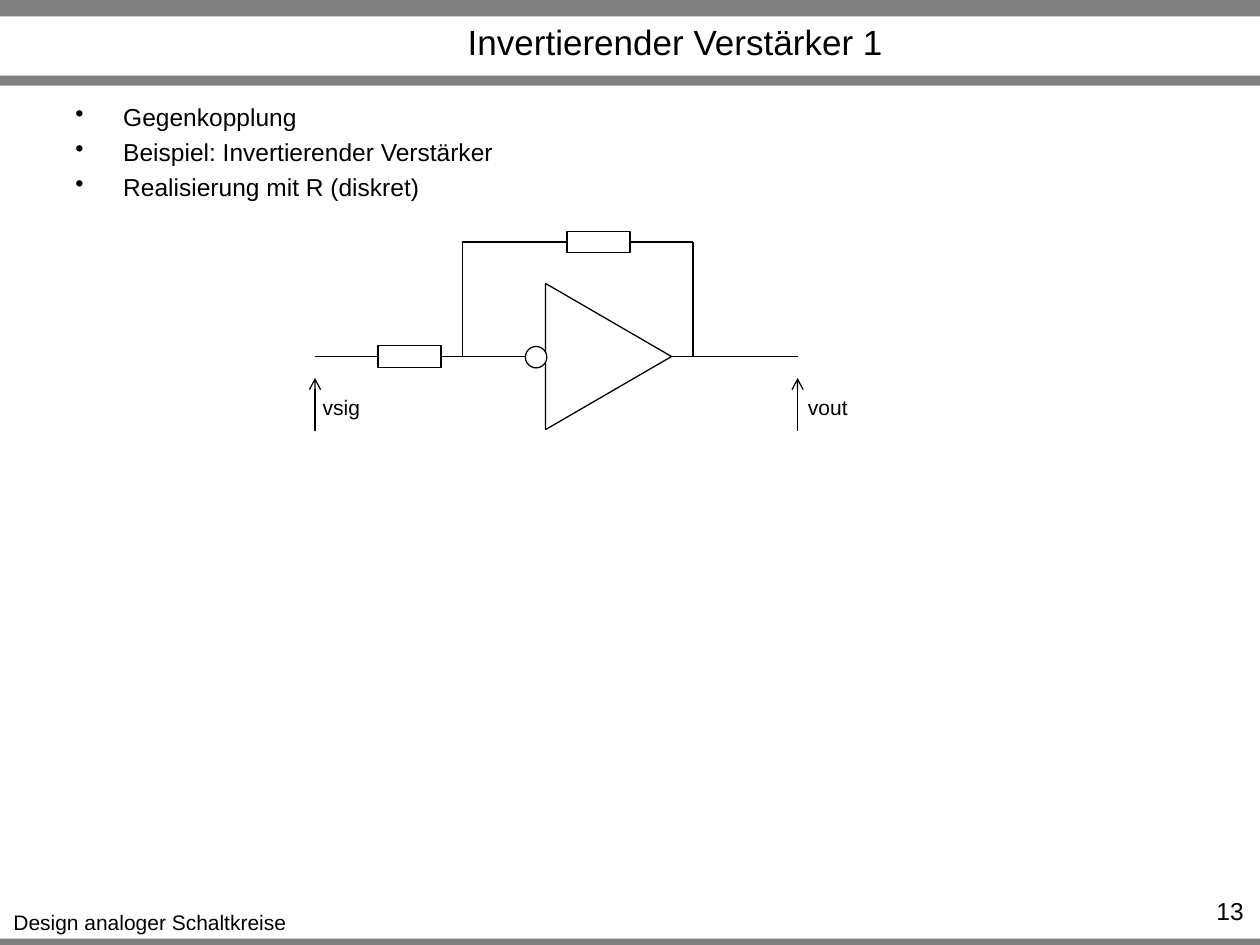
"""Build a slide showing an inverting amplifier with negative feedback."""
from dataclasses import dataclass
from typing import Any, Optional

from lxml.etree import SubElement
from pptx import Presentation
from pptx.dml.color import RGBColor
from pptx.enum.shapes import MSO_CONNECTOR, MSO_SHAPE as SHAPE
from pptx.enum.text import MSO_ANCHOR as ANCHOR, MSO_AUTO_SIZE as AUTO, PP_ALIGN as ALIGN
from pptx.oxml.ns import qn
from pptx.util import Inches, Pt

BLACK, WHITE, GREY = "000000", "FFFFFF", "808080"
SIGNAL_Y, FEEDBACK_Y = 2.83, 1.92
IN_X, OUT_X, TAP_IN_X, TAP_OUT_X = 2.5, 6.33, 3.67, 5.5
RESISTOR_W, RESISTOR_H = 0.5, 0.17
LEFT, RIGHT = 1, 3


@dataclass
class Wire:
    x1: float
    y1: float
    x2: float
    y2: float
    start: Optional[tuple[Any, int]] = None
    end: Optional[tuple[Any, int]] = None
    arrow: bool = False


def rgb(value: str) -> RGBColor:
    return RGBColor.from_string(value)


def add_part(shapes: Any, kind: Any, x: float, y: float, w: float, h: float,
             fill: Optional[str] = WHITE, line: Optional[str] = BLACK,
             rotation: float = 0) -> Any:
    s = shapes.add_shape(kind, Inches(x), Inches(y), Inches(w), Inches(h))
    s.shadow.inherit = False
    s.rotation = rotation
    if fill:
        s.fill.solid()
        s.fill.fore_color.rgb = rgb(fill)
    else:
        s.fill.background()
    if line:
        s.line.color.rgb = rgb(line)
        s.line.width = Pt(0.75)
    else:
        s.line.fill.background()
    return s


def add_resistor(shapes: Any, x: float, y: float) -> Any:
    return add_part(shapes, SHAPE.RECTANGLE, x, y - RESISTOR_H / 2, RESISTOR_W, RESISTOR_H)


def add_wire(shapes: Any, wire: Wire) -> None:
    s = shapes.add_connector(MSO_CONNECTOR.STRAIGHT, Inches(wire.x1), Inches(wire.y1),
                             Inches(wire.x2), Inches(wire.y2))
    if wire.start:
        s.begin_connect(*wire.start)
    if wire.end:
        s.end_connect(*wire.end)
    s.line.color.rgb = rgb(BLACK)
    s.line.width = Pt(0.75)
    if wire.arrow:
        SubElement(s.line._get_or_add_ln(), qn("a:tailEnd"), type="arrow")
    SubElement(s._element.spPr, qn("a:effectLst"))


def add_text(shapes: Any, text: str, x: float, y: float, w: float, h: float,
             size: float = 12, align: Any = ALIGN.CENTER, anchor: Any = ANCHOR.TOP,
             wrap: bool = True, bullets: bool = False) -> None:
    tf = shapes.add_textbox(Inches(x), Inches(y), Inches(w), Inches(h)).text_frame
    tf.word_wrap = wrap
    tf.auto_size = AUTO.NONE if wrap else AUTO.SHAPE_TO_FIT_TEXT
    tf.vertical_anchor = anchor
    for i, line in enumerate(text.split("\n")):
        p = tf.add_paragraph() if i else tf.paragraphs[0]
        p.alignment = align
        if i:
            p.space_before = Pt(3.2)
        if bullets:
            pPr = p._p.get_or_add_pPr()
            pPr.set("marL", str(Inches(0.38)))
            pPr.set("indent", str(-Inches(0.38)))
            SubElement(pPr, qn("a:buChar"), char="•")
        r = p.add_run()
        r.text = line
        r.font.name = "Arial"
        r.font.size = Pt(size)
        r.font.color.rgb = rgb(BLACK)


def add_frame(shapes: Any) -> None:
    for y, h in ((7.45, 0.08), (0, 0.13), (0.6, 0.08)):
        add_part(shapes, SHAPE.RECTANGLE, 0, y, 10, h, fill=GREY, line=None)
    add_text(shapes, "Design analoger Schaltkreise", 0, 7.17, 2.38, 0.3, wrap=False)
    add_text(shapes, "Invertierender Verstärker 1", 1.26, 0.14, 8.2, 0.38,
             size=20, anchor=ANCHOR.MIDDLE)
    add_text(shapes, "Gegenkopplung\nBeispiel: Invertierender Verstärker\n"
             "Realisierung mit R (diskret)", 0.5, 0.76, 9, 0.49,
             size=14, align=ALIGN.LEFT, bullets=True)
    add_text(shapes, "13", 9.1, 7.06, 0.87, 0.24, size=14, align=ALIGN.RIGHT)


def add_circuit(shapes: Any) -> None:
    add_part(shapes, SHAPE.ISOSCELES_TRIANGLE, 4.25, 2.33, 1.16, 1, fill=None, rotation=90)
    r_in = add_resistor(shapes, 3, SIGNAL_Y)
    r_feedback = add_resistor(shapes, 4.5, FEEDBACK_Y)
    wires = [
        Wire(IN_X, SIGNAL_Y, 3, SIGNAL_Y, end=(r_in, LEFT)),
        Wire(3.5, SIGNAL_Y, 4.17, SIGNAL_Y, start=(r_in, RIGHT)),
        Wire(5.33, SIGNAL_Y, OUT_X, SIGNAL_Y),
        Wire(TAP_IN_X, FEEDBACK_Y, 4.5, FEEDBACK_Y, end=(r_feedback, LEFT)),
        Wire(5, FEEDBACK_Y, TAP_OUT_X, FEEDBACK_Y, start=(r_feedback, RIGHT)),
    ]
    wires += [Wire(x, FEEDBACK_Y, x, SIGNAL_Y) for x in (TAP_IN_X, TAP_OUT_X)]
    wires += [Wire(x, 3.42, x, 3, arrow=True) for x in (IN_X, OUT_X)]
    for wire in wires:
        add_wire(shapes, wire)
    add_part(shapes, SHAPE.OVAL, 4.17, 2.75, 0.17, 0.17)
    for name, x, w in (("vsig", 2.46, 0.5), ("vout", 6.31, 0.52)):
        add_text(shapes, name, x, 3.08, w, 0.3, wrap=False)


def main() -> None:
    prs = Presentation()
    prs.slide_width, prs.slide_height = Inches(10), Inches(7.5)
    shapes = prs.slides.add_slide(prs.slide_layouts[6]).shapes
    add_frame(shapes)
    add_circuit(shapes)
    prs.save("out.pptx")


if __name__ == "__main__":
    main()
